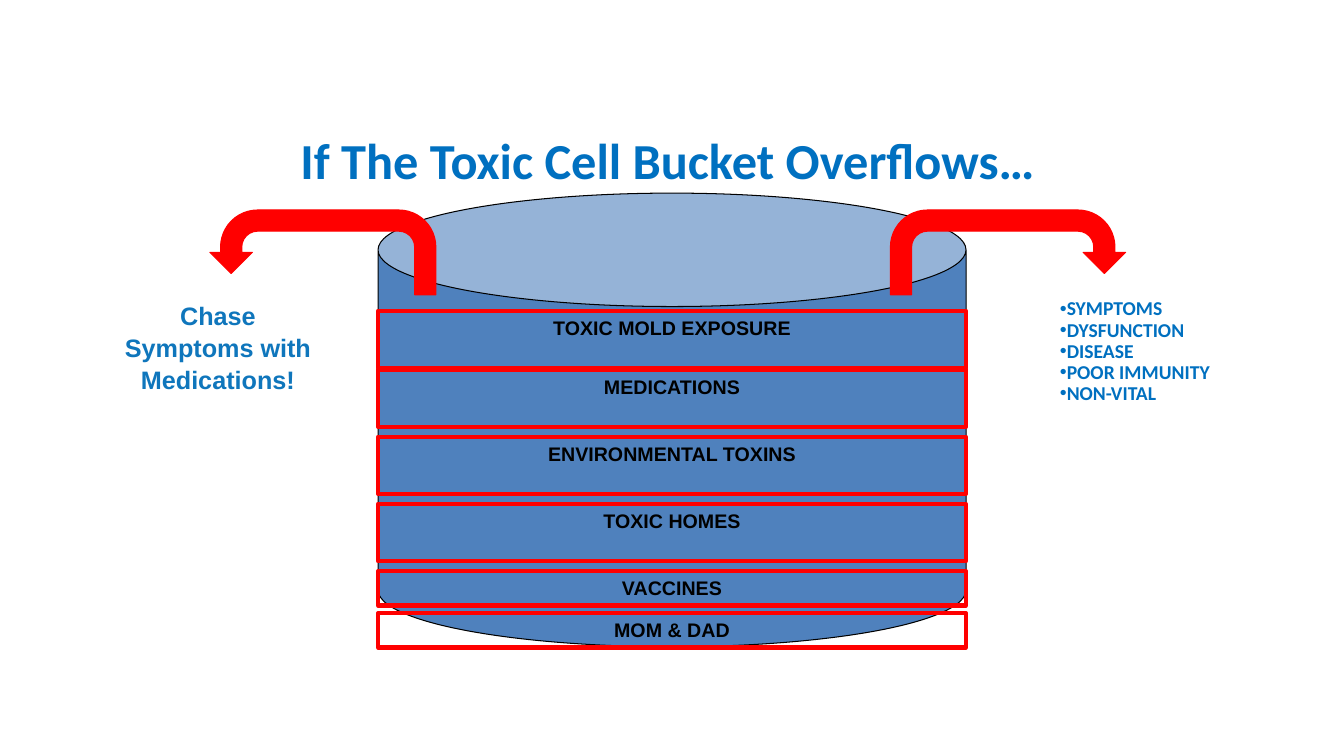
from dataclasses import dataclass

import pptx
import pptx.dml.color
import pptx.enum.shapes
import pptx.enum.text
import pptx.oxml
import pptx.oxml.ns
import pptx.util

SHAPES = pptx.enum.shapes.MSO_SHAPE
ALIGN = pptx.enum.text.PP_ALIGN
COLORS = {
    "bucket": "4F81BD",
    "overflow": "FF0000",
    "ink": "000000",
    "heading": "0070C0",
    "advice": "0F76BC",
}
SLIDE_WIDTH = pptx.util.Inches(13.33)
SLIDE_HEIGHT = pptx.util.Inches(7.5)
COLUMN = SLIDE_WIDTH / 16
ROW = SLIDE_HEIGHT / 9
BUCKET_LEFT, BUCKET_WIDTH = 4.5, 7
TALL, SHORT = 0.68, 0.41


@dataclass(frozen=True)
class Area:
    """A place on the slide, in columns and rows of the grid."""
    left: float
    top: float
    width: float
    height: float

    def emu(self) -> tuple[int, int, int, int]:
        return (round(self.left * COLUMN), round(self.top * ROW),
                round(self.width * COLUMN), round(self.height * ROW))


@dataclass(frozen=True)
class Layer:
    label: str
    top: float
    height: float


@dataclass(frozen=True)
class Style:
    font: str
    size: int
    color: str
    align: ALIGN = ALIGN.CENTER
    spacing: float = 1.0
    bulleted: bool = False


@dataclass(frozen=True)
class Caption:
    area: Area
    lines: tuple[str, ...]
    style: Style


LAYERS = [
    Layer("VACCINES", 6.8, SHORT),
    Layer("TOXIC HOMES", 6, TALL),
    Layer("ENVIRONMENTAL TOXINS", 5.2, TALL),
    Layer("MEDICATIONS", 4.4, TALL),
    Layer("TOXIC MOLD EXPOSURE", 3.7, TALL),
    Layer("MOM & DAD", 7.3, SHORT),
]
LAYER_STYLE = Style("Arial", 14, "ink")
CAPTIONS = [
    Caption(Area(1.25, 3.5, 2.69, 1.37), ("Chase Symptoms with Medications!",),
            Style("Arial", 18, "advice", spacing=1.05)),
    Caption(Area(-0.3, 1.56, 16.5, 2.14), ("If The Toxic Cell Bucket Overflows…",),
            Style("Calibri", 36, "heading", spacing=0.9)),
    Caption(Area(12.5, 3.5, 3.66, 1.9),
            ("SYMPTOMS", "DYSFUNCTION", "DISEASE", "POOR IMMUNITY", "NON-VITAL"),
            Style("Calibri", 14, "heading", ALIGN.LEFT, 0.9, True)),
]


def rgb(name: str) -> pptx.dml.color.RGBColor:
    return pptx.dml.color.RGBColor.from_string(COLORS[name])


def add_bullet(paragraph) -> None:
    properties = paragraph._p.get_or_add_pPr()
    properties.set("marL", "0")
    properties.set("indent", "0")
    for tag, attribute, value in (("a:buFont", "typeface", "Arial"),
                                  ("a:buChar", "char", "•")):
        bullet = pptx.oxml.parse_xml(
            f'<{tag} {pptx.oxml.ns.nsdecls("a")} {attribute}="{value}"/>')
        properties.append(bullet)


def write(frame, lines: tuple[str, ...], style: Style) -> None:
    frame.word_wrap = True
    frame.vertical_anchor = pptx.enum.text.MSO_ANCHOR.TOP
    for index, line in enumerate(lines):
        paragraph = frame.add_paragraph() if index else frame.paragraphs[0]
        paragraph.text = line
        if style.bulleted:
            add_bullet(paragraph)
        paragraph.alignment = style.align
        paragraph.line_spacing = style.spacing
        paragraph.font.name = style.font
        paragraph.font.size = pptx.util.Pt(style.size)
        paragraph.font.bold = True
        paragraph.font.color.rgb = rgb(style.color)


def add_figure(slide, kind: SHAPES, area: Area, fill: str | None,
               outline: str, weight: float):
    figure = slide.shapes.add_shape(kind, *area.emu())
    figure.shadow.inherit = False
    if fill:
        figure.fill.solid()
        figure.fill.fore_color.rgb = rgb(fill)
    else:
        figure.fill.background()
    figure.line.color.rgb = rgb(outline)
    figure.line.width = pptx.util.Pt(weight)
    return figure


def add_overflow_arrow(slide, area: Area, leftward: bool) -> None:
    arrow = add_figure(slide, SHAPES.U_TURN_ARROW, area, "overflow", "overflow", 0.75)
    if leftward:
        arrow._element.spPr.xfrm.set("flipH", "1")


def main() -> None:
    deck = pptx.Presentation()
    deck.slide_width, deck.slide_height = SLIDE_WIDTH, SLIDE_HEIGHT
    slide = deck.slides.add_slide(deck.slide_layouts[6])

    bucket = add_figure(slide, SHAPES.CAN, Area(BUCKET_LEFT, 2.3, BUCKET_WIDTH, 5.4),
                        "bucket", "ink", 0.75)
    bucket.adjustments[0] = 0.25
    for layer in LAYERS:
        area = Area(BUCKET_LEFT, layer.top, BUCKET_WIDTH, layer.height)
        band = add_figure(slide, SHAPES.RECTANGLE, area, None, "overflow", 3)
        write(band.text_frame, (layer.label,), LAYER_STYLE)

    add_overflow_arrow(slide, Area(10.6, 2.5, 2.8, 1.01), leftward=False)
    add_overflow_arrow(slide, Area(2.5, 2.5, 2.69, 1.01), leftward=True)
    for caption in CAPTIONS:
        box = slide.shapes.add_textbox(*caption.area.emu())
        write(box.text_frame, caption.lines, caption.style)

    deck.save("out.pptx")


if __name__ == "__main__":
    main()
